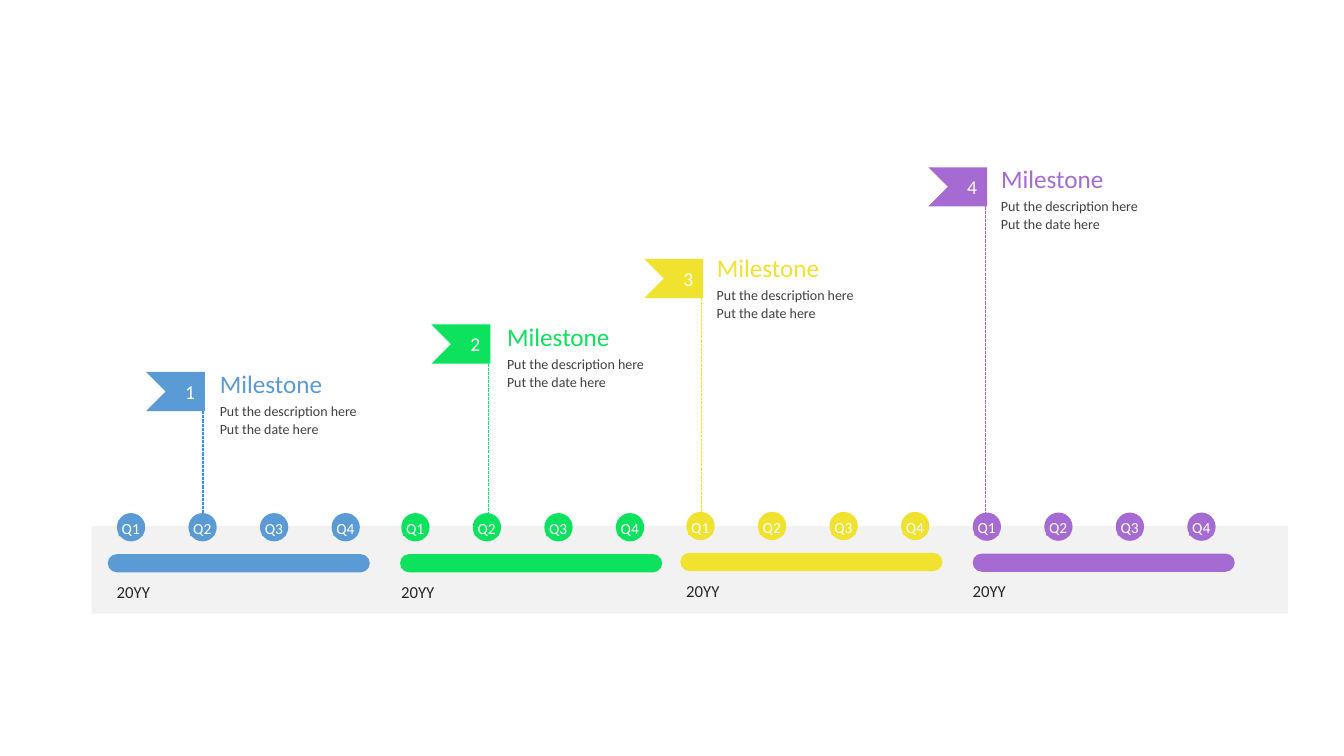
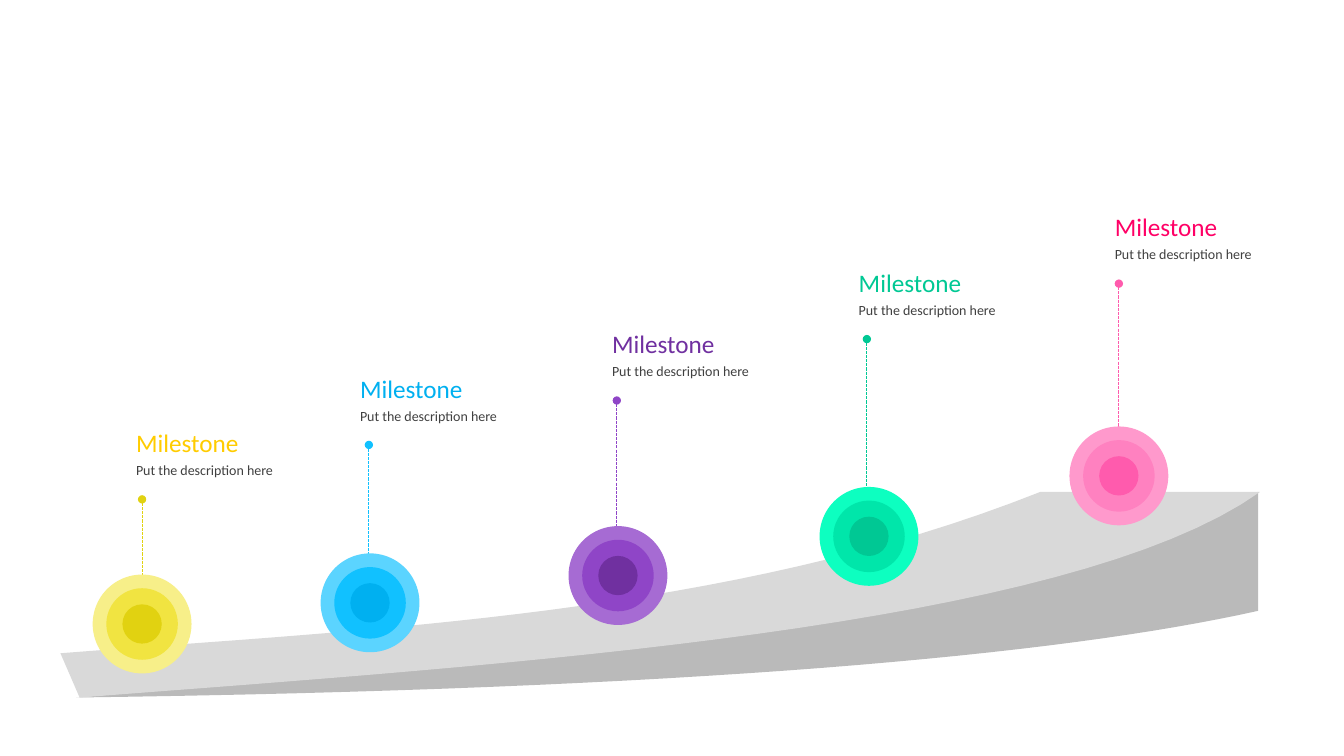
import lxml.etree
import pptx
import pptx.dml.color
import pptx.enum.dml
import pptx.enum.shapes
import pptx.enum.text
import pptx.oxml.ns
import pptx.util

Pt = pptx.util.Pt
KIND = pptx.enum.shapes.MSO_SHAPE
ALIGN = pptx.enum.text.PP_ALIGN
ANCHOR = pptx.enum.text.MSO_ANCHOR
qn = pptx.oxml.ns.qn

FONT = "Calibri"
WHITE, INK, GREY = "FFFFFF", "262626", "404040"
TITLE = "Milestone"
NOTES = ["Put the description here", "Put the date here"]
BARE = dict(margin_left=0, margin_right=0, margin_top=0, margin_bottom=0)
NOTE_TOP, NOTE_STEP = 24.4, 13

# Slide 1: quarters of four years, each year with one flag
QUARTERS = ["Q1", "Q2", "Q3", "Q4"]
BAND = (65.5, 375.8, 854.6, 62.6)
DOT, PITCH, DOT_TOP = 20.2, 51.1, 366.5
FLAG_W, FLAG_H, NOTCH = 42, 28, 14
YEARS = [
    dict(color="5B9BD5", stem="3392FB", dot=83.5, bar=77, lift=0,
         flag=(104.4, 265.7), head=(157, 262.8)),
    dict(color="0CE25E", stem="0CE25E", dot=286.6, bar=285.8, lift=0,
         flag=(308.2, 231.8), head=(362.2, 229.7)),
    dict(color="F0E22E", stem="F0E22E", dot=490.3, bar=486, lift=0.9,
         flag=(460.3, 185), head=(512, 180)),
    dict(color="A66BD3", stem="A66BD3", dot=694.8, bar=694.8, lift=0.4,
         flag=(663.1, 119.5), head=(715, 116.6)),
]

# Slide 2: rings along a rising road
RINGS = (70.6, 51.1, 28.1)
STEM_TOP = 51.4
STOPS = [
    dict(ring=(66.2, 410.4), tones=("F7EF89", "F1E441", "E1D211"),
         stem=(101.5, "E1D211"), head=(97.2, 305.3), color="FFCC00"),
    dict(ring=(229, 395.3), tones=("5BD4FF", "11C1FF", "00B0F0"),
         stem=(263.5, "11C1FF"), head=(257.2, 266.4), color="00B0F0"),
    dict(ring=(406.1, 375.8), tones=("A66BD3", "8F45C7", "7030A0"),
         stem=(440.6, "8F45C7"), head=(437.2, 234.7), color="7030A0"),
    dict(ring=(585.4, 347.8), tones=("0DFFC0", "00E6AA", "00C894"),
         stem=(619.2, "00C894"), head=(613.4, 190.8), color="00C894"),
    dict(ring=(763.9, 304.6), tones=("FF99CC", "FF81C0", "FF5BAD"),
         stem=(799.2, "FF5BAD"), head=(796.3, 151.2), color="FF0066"),
]
# Each step holds one point (a line) or three (a curve)
ROAD = [
    ("BABABA", (898.6, 436.3), [
        [(898.6, 351.4)],
        [(684.7, 449.3), (435.6, 466.6), (54.7, 498.2)],
        [(491.8, 492.5), (757.4, 468), (898.6, 436.3)]]),
    ("D9D9D9", (43.2, 466.6), [
        [(264.2, 449.3), (520.6, 439.9), (743, 351.4)],
        [(900, 351.4)],
        [(762.5, 449.3), (363.6, 474.5), (56.9, 498.2)]]),
]


def rgb(code):
    return pptx.dml.color.RGBColor.from_string(code)


def apply(obj, **values):
    for name, value in values.items():
        setattr(obj, name, value)


def paint(shape, color):
    shape.shadow.inherit = False
    shape.fill.solid()
    shape.fill.fore_color.rgb = rgb(color)
    shape.line.fill.background()


def write(shape, text, size, color, align=ALIGN.LEFT, anchor=ANCHOR.TOP, **frame):
    apply(shape.text_frame, word_wrap=True, vertical_anchor=anchor, **frame)
    para = shape.text_frame.paragraphs[0]
    para.alignment = align
    run = para.add_run()
    run.text = text
    apply(run.font, name=FONT, size=Pt(size))
    run.font.color.rgb = rgb(color)


def block(slide, kind, box, color):
    shape = slide.shapes.add_shape(kind, *map(Pt, box))
    paint(shape, color)
    return shape


def label(slide, box, text, size, color, align=ALIGN.LEFT):
    shape = slide.shapes.add_textbox(*map(Pt, box))
    write(shape, text, size, color, align, **BARE)


def outline(slide, points, color):
    (left, top), *rest = [tuple(map(Pt, point)) for point in points]
    form = slide.shapes.build_freeform(left, top, 1.0)
    form.add_line_segments(rest, close=True)
    shape = form.convert_to_shape()
    paint(shape, color)
    return shape


def stem(slide, x, top, end, color, knob=False):
    """Draw a dashed upright line, with a round top end if knob is set."""
    line = slide.shapes.add_connector(
        pptx.enum.shapes.MSO_CONNECTOR.STRAIGHT, *map(Pt, (x, top, x, end)))
    line.line.color.rgb = rgb(color)
    apply(line.line, width=Pt(0.75),
          dash_style=pptx.enum.dml.MSO_LINE.SQUARE_DOT)
    props = line._element.spPr
    if knob:
        lxml.etree.SubElement(props.find(qn("a:ln")), qn("a:headEnd"), type="oval")
    lxml.etree.SubElement(props, qn("a:effectLst"))


def caption(slide, head, color, notes):
    x, y = head
    label(slide, (x, y, 82, 21.6), TITLE, 18, color)
    for i, note in enumerate(notes):
        label(slide, (x, y + NOTE_TOP + i * NOTE_STEP, 124, 12.5), note, 10, GREY)


def trace(start, steps, count=32):
    """Turn lines and cubic curves into a list of points."""
    points = [start]
    for step in steps:
        if len(step) == 1:
            points += step
            continue
        curve = [points[-1], *step]
        for i in range(1, count + 1):
            t = i / count
            u = 1 - t
            parts = (u ** 3, 3 * u * u * t, 3 * u * t * t, t ** 3)
            points.append(tuple(sum(w * p[k] for w, p in zip(parts, curve))
                                for k in (0, 1)))
    return points


def add_year(slide, number, year):
    color, lift = year["color"], year["lift"]
    left, top = year["flag"]
    right, base = left + FLAG_W, top + FLAG_H
    dot_y = DOT_TOP - lift
    stem(slide, right - 1.4, base, dot_y + 1, year["stem"])
    label(slide, (year["dot"] - 10.5, 415.4 - lift, 44.6, 18.7),
          "20YY", 12, INK, ALIGN.CENTER)
    bar = block(slide, KIND.ROUNDED_RECTANGLE,
                (year["bar"], 395.8 - lift, 187.2, 13), color)
    bar.adjustments[0] = 0.5
    for i, name in enumerate(QUARTERS):
        x = year["dot"] + i * PITCH
        block(slide, KIND.OVAL, (x, dot_y, DOT, DOT), color)
        plate = block(slide, KIND.RECTANGLE, (x + 1.3, dot_y + 5, 17.3, 11.5), color)
        write(plate, name, 11, WHITE, ALIGN.CENTER, ANCHOR.MIDDLE, **BARE)
    flag = outline(slide, [(right, top), (left, top),
                           (left + NOTCH, top + FLAG_H / 2),
                           (left, base), (right, base)], color)
    write(flag, str(number), 14, WHITE, ALIGN.RIGHT, ANCHOR.MIDDLE)
    caption(slide, year["head"], color, NOTES)


def add_stop(slide, stop):
    left, top = stop["ring"]
    x, tone = stop["stem"]
    stem(slide, x, stop["head"][1] + STEM_TOP, top + 3, tone, knob=True)
    for size, color in zip(RINGS, stop["tones"]):
        inset = (RINGS[0] - size) / 2
        block(slide, KIND.OVAL, (left + inset, top + inset, size, size), color)
    caption(slide, stop["head"], stop["color"], NOTES[:1])


def main():
    deck = pptx.Presentation()
    apply(deck, slide_width=Pt(960), slide_height=Pt(540))
    years, road = [deck.slides.add_slide(deck.slide_layouts[6]) for _ in range(2)]

    block(years, KIND.RECTANGLE, BAND, "F2F2F2")
    for number, year in enumerate(YEARS, 1):
        add_year(years, number, year)

    for color, start, steps in ROAD:
        outline(road, trace(start, steps), color)
    for stop in STOPS:
        add_stop(road, stop)

    deck.save("out.pptx")


if __name__ == "__main__":
    main()
